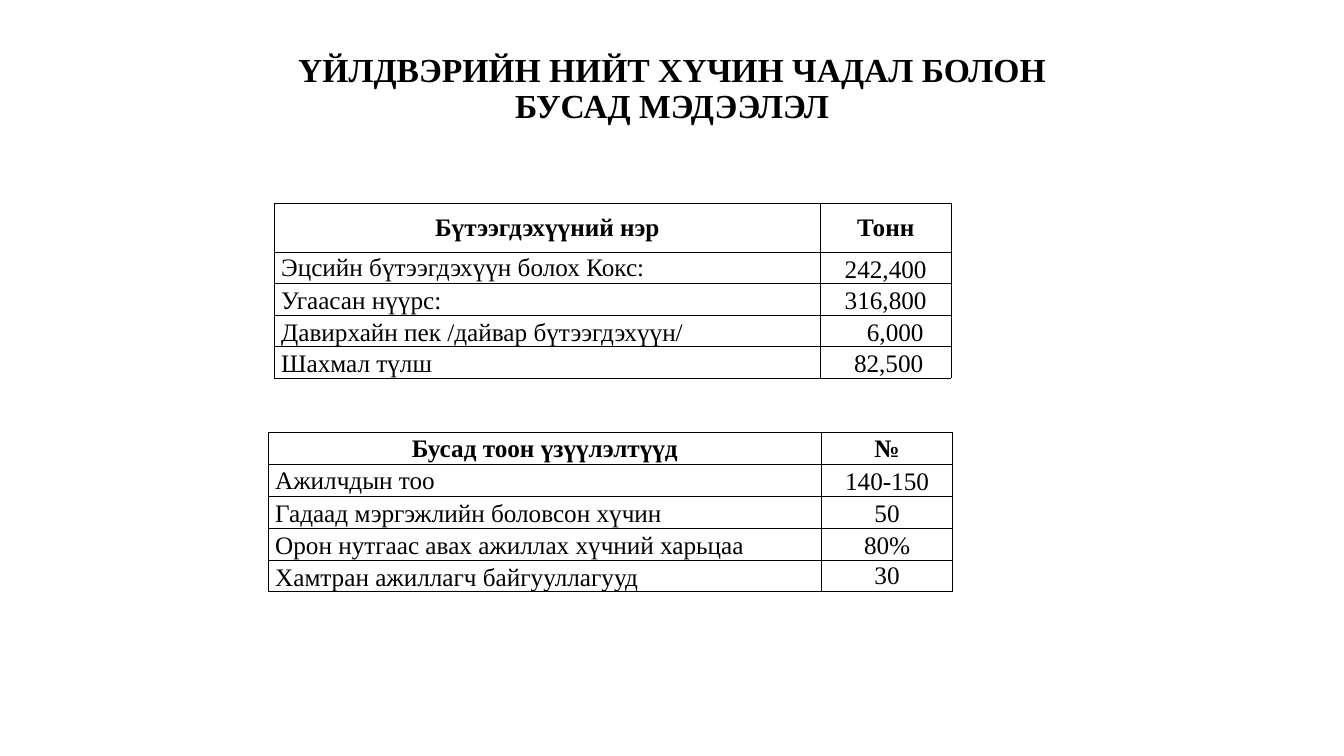
"""Build a slide with two tables on plant capacity and staffing."""
from dataclasses import dataclass

from lxml import etree
from pptx import Presentation, util as u
from pptx.dml.color import RGBColor
from pptx.enum import text
from pptx.oxml.ns import qn

WIDTH, HEIGHT = u.Inches(13.33), u.Inches(7.5)
MIDDLE, BOTTOM = text.MSO_ANCHOR.MIDDLE, text.MSO_ANCHOR.BOTTOM
LEFT, CENTER = text.PP_ALIGN.LEFT, text.PP_ALIGN.CENTER


@dataclass(frozen=True)
class Theme:
    """Hold the typeface, sizes, colour and cell spacing."""
    font: str = "Times New Roman"
    ink: str = "000000"
    title_size: int = 24
    table_size: int = 18
    border: float = 0.5
    inset: float = 0.01
    label_indent: float = 0.06


@dataclass(frozen=True)
class Row:
    """Describe a table row; shift widens the left inset of the value."""
    label: str
    value: str
    label_anchor: text.MSO_ANCHOR = BOTTOM
    value_anchor: text.MSO_ANCHOR = BOTTOM
    shift: float = 0


THEME = Theme()

PRODUCTS = [
    Row("Бүтээгдэхүүний нэр", "Тонн", MIDDLE, MIDDLE),
    Row("Эцсийн бүтээгдэхүүн болох Кокс:", "242,400", MIDDLE),
    Row("Угаасан нүүрс:", "316,800"),
    Row("Давирхайн пек /дайвар бүтээгдэхүүн/", "6,000", shift=0.19),
    Row("Шахмал түлш", "82,500", shift=0.06),
]
INDICATORS = [
    Row("Бусад тоон үзүүлэлтүүд", "№", MIDDLE, MIDDLE),
    Row("Ажилчдын тоо", "140-150", MIDDLE),
    Row("Гадаад мэргэжлийн боловсон хүчин", "50"),
    Row("Орон нутгаас авах ажиллах хүчний харьцаа", "80%"),
    Row("Хамтран ажиллагч байгууллагууд", "30", value_anchor=MIDDLE),
]


def across(percent):
    """Return a percentage of the slide's width."""
    return u.Emu(round(WIDTH * percent / 100))


def down(percent):
    """Return a percentage of the slide's height."""
    return u.Emu(round(HEIGHT * percent / 100))


def format_text(paragraph, size, bold, alignment):
    """Apply the theme's type to a paragraph and its runs."""
    paragraph.alignment = alignment
    for run in paragraph.runs:
        run.font.name = THEME.font
        run.font.size = u.Pt(size)
        run.font.bold = bold
        run.font.color.rgb = RGBColor.from_string(THEME.ink)


def add_title(slide, wording):
    """Place and format the title placeholder."""
    title = slide.shapes.title
    title.left, title.top = across(7.13), down(10.27)
    title.width, title.height = across(85.75), down(7.07)
    frame = title.text_frame
    frame.text = wording
    frame.word_wrap = True
    frame.auto_size = text.MSO_AUTO_SIZE.NONE
    frame.vertical_anchor = BOTTOM
    paragraph = frame.paragraphs[0]
    paragraph.line_spacing = 0.9
    format_text(paragraph, THEME.title_size, True, CENTER)


def add_borders(cell):
    """Draw a thin line on each side of a cell."""
    properties = cell._tc.get_or_add_tcPr()
    for position, side in enumerate(("a:lnL", "a:lnR", "a:lnT", "a:lnB")):
        line = etree.Element(qn(side), w=str(u.Pt(THEME.border)))
        fill = etree.SubElement(line, qn("a:solidFill"))
        etree.SubElement(fill, qn("a:srgbClr"), val=THEME.ink)
        properties.insert(position, line)


def fill_cell(cell, wording, anchor, alignment, bold, indent):
    """Write and format one table cell."""
    cell.text = wording
    cell.vertical_anchor = anchor
    cell.margin_left = u.Inches(THEME.inset + indent)
    cell.margin_right = cell.margin_top = u.Inches(THEME.inset)
    cell.margin_bottom = 0
    cell.fill.background()
    add_borders(cell)
    format_text(cell.text_frame.paragraphs[0], THEME.table_size, bold, alignment)


def add_data_table(slide, rows, left, top, columns, header, body):
    """Add a two-column table with a header row and equal body rows."""
    heights = [down(header)] + [down(body)] * (len(rows) - 1)
    widths = [across(column) for column in columns]
    table = slide.shapes.add_table(
        len(rows), len(columns), across(left), down(top), sum(widths), sum(heights)
    ).table
    table.first_row = table.horz_banding = False
    for column, width in zip(table.columns, widths):
        column.width = width
    for index, (row, height) in enumerate(zip(rows, heights)):
        table.rows[index].height = height
        is_header = index == 0
        alignment = CENTER if is_header else LEFT
        indent = 0 if is_header else THEME.label_indent
        fill_cell(table.cell(index, 0), row.label, row.label_anchor,
                  alignment, is_header, indent)
        fill_cell(table.cell(index, 1), row.value, row.value_anchor,
                  CENTER, is_header, row.shift)


def main():
    """Build and save the slide."""
    presentation = Presentation()
    presentation.slide_width, presentation.slide_height = WIDTH, HEIGHT
    slide = presentation.slides.add_slide(presentation.slide_layouts[5])
    add_title(slide, "ҮЙЛДВЭРИЙН НИЙТ ХҮЧИН ЧАДАЛ БОЛОН\vБУСАД МЭДЭЭЛЭЛ")
    add_data_table(slide, PRODUCTS, 20.4, 26.93, (40.65, 9.7), 6.4, 4.17)
    add_data_table(slide, INDICATORS, 19.95, 57.2, (41.18, 9.75), 4.22, 4.22)
    presentation.save("out.pptx")


if __name__ == "__main__":
    main()
